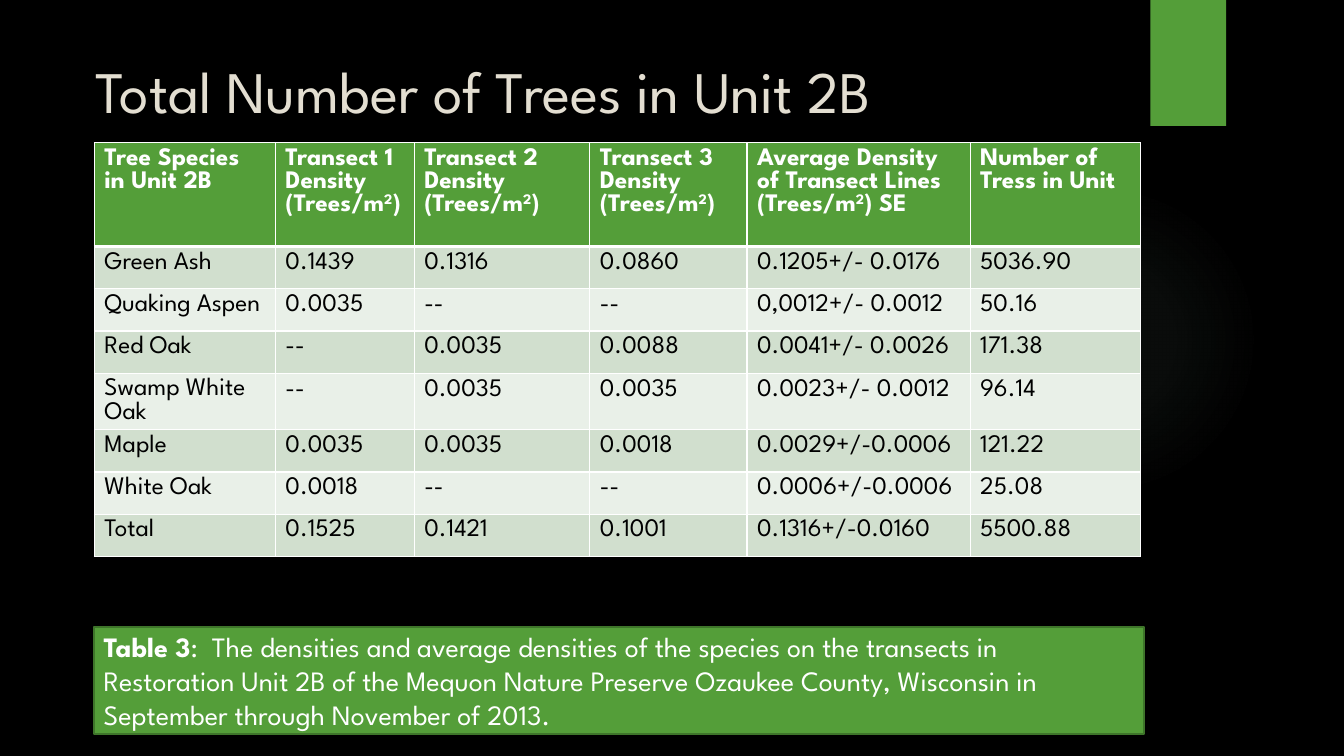
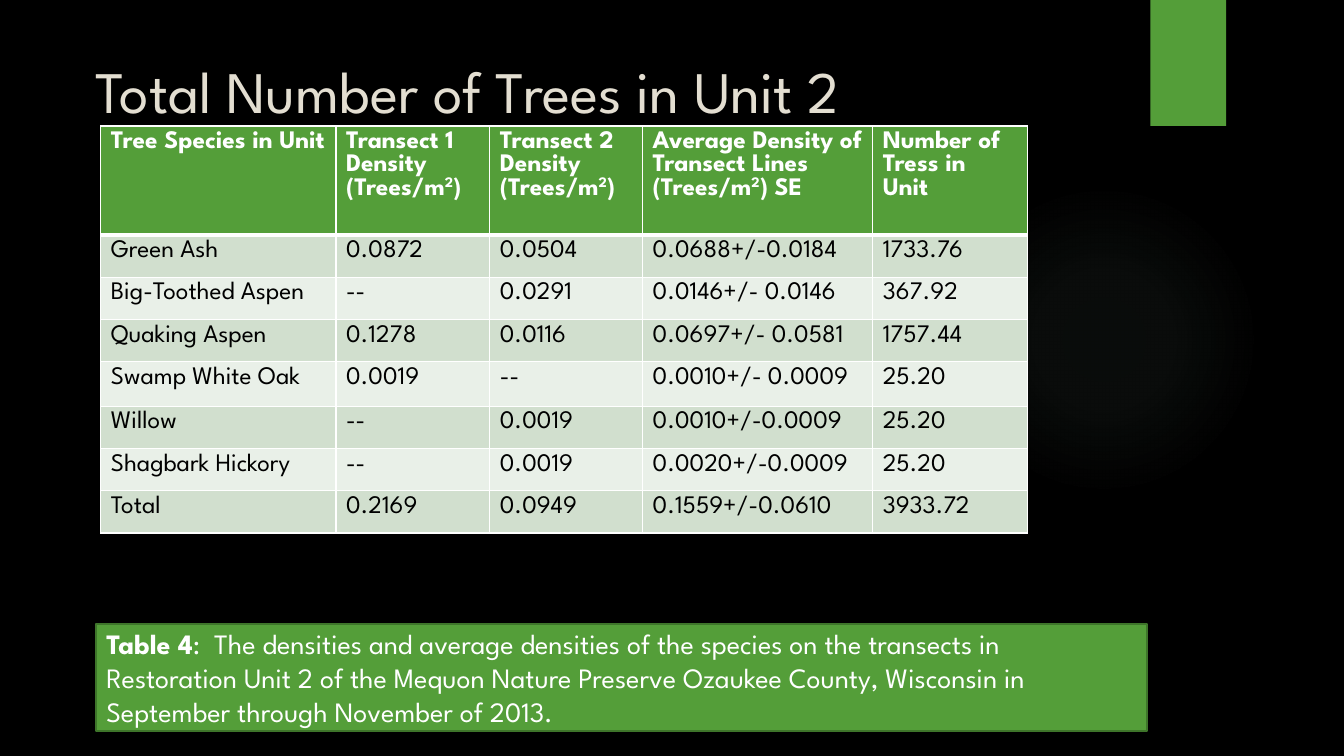
from lxml.etree import SubElement
from pptx import Presentation
from pptx.dml.color import RGBColor
from pptx.enum.shapes import MSO_SHAPE
from pptx.enum.text import MSO_ANCHOR, PP_ALIGN
from pptx.oxml import parse_xml
from pptx.oxml.ns import nsdecls, qn
from pptx.util import Inches, Pt

# Shared style
FONT = "League Spartan"
BLACK = RGBColor(0x00, 0x00, 0x00)
WHITE = RGBColor(0xFF, 0xFF, 0xFF)
CREAM = RGBColor(0xE3, 0xDE, 0xD1)
GREEN = RGBColor(0x54, 0x9E, 0x39)
DARK_GREEN = RGBColor(0x3E, 0x75, 0x2A)
GLOW = RGBColor(0x87, 0xA8, 0x96)
BANDS = (RGBColor(0xD1, 0xDF, 0xCE), RGBColor(0xE9, 0xF0, 0xE8))
TIGHT_LINE = Pt(16.5)

# Row heights in percent of the slide height
ROW = 5.6
OAK_ROW = 5.87


def write(paragraph, text, size=18, color=WHITE, bold=False, baseline=0, spacing=0):
    """Add a formatted run to a paragraph."""
    run = paragraph.add_run()
    run.text = text
    run.font.name = FONT
    run.font.size = Pt(size)
    run.font.bold = bold
    run.font.color.rgb = color
    if baseline:
        run.font._element.set("baseline", str(baseline * 1000))
    if spacing:
        run.font._element.set("spc", str(spacing * 100))


class Deck:
    """Holds the presentation and current slide; lengths are percentages."""

    def __init__(self):
        self.presentation = Presentation()
        self.presentation.slide_width = Inches(13.33)
        self.presentation.slide_height = Inches(7.5)
        self.slide = None

    def across(self, share):
        return round(self.presentation.slide_width * share / 100)

    def down(self, share):
        return round(self.presentation.slide_height * share / 100)

    def area(self, left, top, width, height):
        return (self.across(left), self.down(top),
                self.across(width), self.down(height))

    def new_slide(self, title):
        layout = self.presentation.slide_layouts[6]
        self.slide = self.presentation.slides.add_slide(layout)
        fill = self.slide.background.fill
        fill.solid()
        fill.fore_color.rgb = BLACK
        self.glow(70.59, 24.4, 23.1, 41.07)
        self.box(85.6, 0, 5.63, 16.67)
        self.title(title)

    def box(self, left, top, width, height, line=None, preset=MSO_SHAPE.RECTANGLE):
        shape = self.slide.shapes.add_shape(
            preset, *self.area(left, top, width, height))
        shape.shadow.inherit = False
        shape.fill.solid()
        shape.fill.fore_color.rgb = GREEN
        if line is None:
            shape.line.fill.background()
        else:
            shape.line.color.rgb = line
            shape.line.width = Pt(1.5)
        return shape

    def glow(self, left, top, width, height):
        shape = self.box(left, top, width, height, preset=MSO_SHAPE.OVAL)
        stops = "".join(
            f'<a:gs pos="{position * 1000}"><a:srgbClr val="{GLOW}">'
            f'<a:alpha val="{alpha * 1000}"/></a:srgbClr></a:gs>'
            for position, alpha in ((0, 7), (36, 6), (69, 0), (100, 0)))
        gradient = parse_xml(
            f'<a:gradFill {nsdecls("a")} rotWithShape="1"><a:gsLst>{stops}</a:gsLst>'
            '<a:path path="circle"><a:fillToRect l="50000" t="50000" '
            'r="50000" b="50000"/></a:path></a:gradFill>')
        properties = shape._element.spPr
        properties.replace(properties.find(qn("a:solidFill")), gradient)

    def title(self, text):
        frame = self.slide.shapes.add_textbox(
            *self.area(6.38, 6.53, 76.3, 11)).text_frame
        frame.word_wrap = True
        write(frame.paragraphs[0], text, size=42, color=CREAM)

    def caption(self, left, top, label, text):
        shape = self.box(left, top, 78.17, 14.13, line=DARK_GREEN)
        frame = shape.text_frame
        frame.word_wrap = True
        frame.margin_right = self.across(2)
        frame.vertical_anchor = MSO_ANCHOR.MIDDLE
        paragraph = frame.paragraphs[0]
        paragraph.alignment = PP_ALIGN.LEFT
        write(paragraph, label, size=20, bold=True)
        write(paragraph, ":", size=20, spacing=5)
        write(paragraph, f" {text}", size=20)

    def borders(self, cell, top, bottom):
        properties = cell._tc.get_or_add_tcPr()
        sides = (("a:lnL", 1), ("a:lnR", 1), ("a:lnT", top), ("a:lnB", bottom))
        for index, (side, width) in enumerate(sides):
            line = properties.makeelement(qn(side), {"w": str(Pt(width))})
            properties.insert(index, line)
            fill = SubElement(line, qn("a:solidFill"))
            SubElement(fill, qn("a:srgbClr"), val=str(WHITE))

    def header(self, cell, text, unit_end=None):
        """Write a heading, with its unit in a second paragraph if it has one."""
        write(cell.text_frame.paragraphs[0], text, bold=True)
        if unit_end:
            unit = cell.text_frame.add_paragraph()
            write(unit, "(Trees/m", bold=True)
            write(unit, "2", bold=True, baseline=30)
            write(unit, unit_end, bold=True)

    def table(self, left, top, widths, heights, headers, rows, wrapped=()):
        """Draw a banded table; wrapped names the entries that take two lines."""
        table = self.slide.shapes.add_table(
            len(heights), len(widths),
            *self.area(left, top, sum(widths), sum(heights))).table
        table.horz_banding = False
        for column, width in zip(table.columns, widths):
            column.width = self.across(width)
        for row, height in zip(table.rows, heights):
            row.height = self.down(height)
        for row_index, values in enumerate([headers, *rows]):
            is_header = row_index == 0
            for column_index, value in enumerate(values):
                cell = table.cell(row_index, column_index)
                cell.fill.solid()
                cell.fill.fore_color.rgb = (
                    GREEN if is_header else BANDS[(row_index - 1) % 2])
                # The first row and the one below share a thick edge
                self.borders(cell, top=3 if row_index == 1 else 1,
                             bottom=3 if is_header else 1)
                if is_header:
                    self.header(cell, *value)
                    continue
                paragraph = cell.text_frame.paragraphs[0]
                if value in wrapped:
                    paragraph.line_spacing = TIGHT_LINE
                write(paragraph, value, color=BLACK)


def tree_headers(species, transects):
    return [(species,),
            *((f"Transect {number} Density", ")")
              for number in range(1, transects + 1)),
            ("Average Density of Transect Lines", ") SE"),
            ("Number of Tress in Unit",)]


def row_heights(header):
    return [header, *[ROW] * 3, OAK_ROW, *[ROW] * 3]


def caption_text(unit):
    return ("The densities and average densities of the species on the "
            f"transects in Restoration Unit {unit} of the Mequon Nature Preserve "
            "Ozaukee County, Wisconsin in September through November of 2013.")


UNIT_2B_TREES = [
    ("Green Ash", "0.1439", "0.1316", "0.0860", "0.1205+/- 0.0176", "5036.90"),
    ("Quaking Aspen", "0.0035", "--", "--", "0,0012+/- 0.0012", "50.16"),
    ("Red Oak", "--", "0.0035", "0.0088", "0.0041+/- 0.0026", "171.38"),
    ("Swamp White Oak", "--", "0.0035", "0.0035", "0.0023+/- 0.0012", "96.14"),
    ("Maple", "0.0035", "0.0035", "0.0018", "0.0029+/-0.0006", "121.22"),
    ("White Oak", "0.0018", "--", "--", "0.0006+/-0.0006", "25.08"),
    ("Total", "0.1525", "0.1421", "0.1001", "0.1316+/-0.0160", "5500.88"),
]

UNIT_2_TREES = [
    ("Green Ash", "0.0872", "0.0504", "0.0688+/-0.0184", "1733.76"),
    ("Big-Toothed Aspen", "--", "0.0291", "0.0146+/- 0.0146", "367.92"),
    ("Quaking Aspen", "0.1278", "0.0116", "0.0697+/- 0.0581", "1757.44"),
    ("Swamp White Oak", "0.0019", "--", "0.0010+/- 0.0009", "25.20"),
    ("Willow", "--", "0.0019", "0.0010+/-0.0009", "25.20"),
    ("Shagbark Hickory", "--", "0.0019", "0.0020+/-0.0009", "25.20"),
    ("Total", "0.2169", "0.0949", "0.1559+/-0.0610", "3933.72"),
]


def main():
    deck = Deck()

    # Unit 2B
    deck.new_slide("Total Number of Trees in Unit 2B")
    deck.table(7.02, 18.87, [13.47, 10.33, 13.07, 11.7, 16.6, 12.65],
               row_heights(13.73), tree_headers("Tree Species in Unit 2B", 3),
               UNIT_2B_TREES, wrapped=("Swamp White Oak",))
    deck.caption(6.98, 82.93, "Table 3", caption_text("2B"))

    # Unit 2
    deck.new_slide("Total Number of Trees in Unit 2")
    deck.table(7.5, 16.67, [17.5, 11.45, 11.37, 17.12, 11.51],
               row_heights(14.4), tree_headers("Tree Species in Unit", 2),
               UNIT_2_TREES)
    deck.caption(7.17, 82.53, "Table 4", caption_text("2"))

    deck.presentation.save("out.pptx")


if __name__ == "__main__":
    main()
